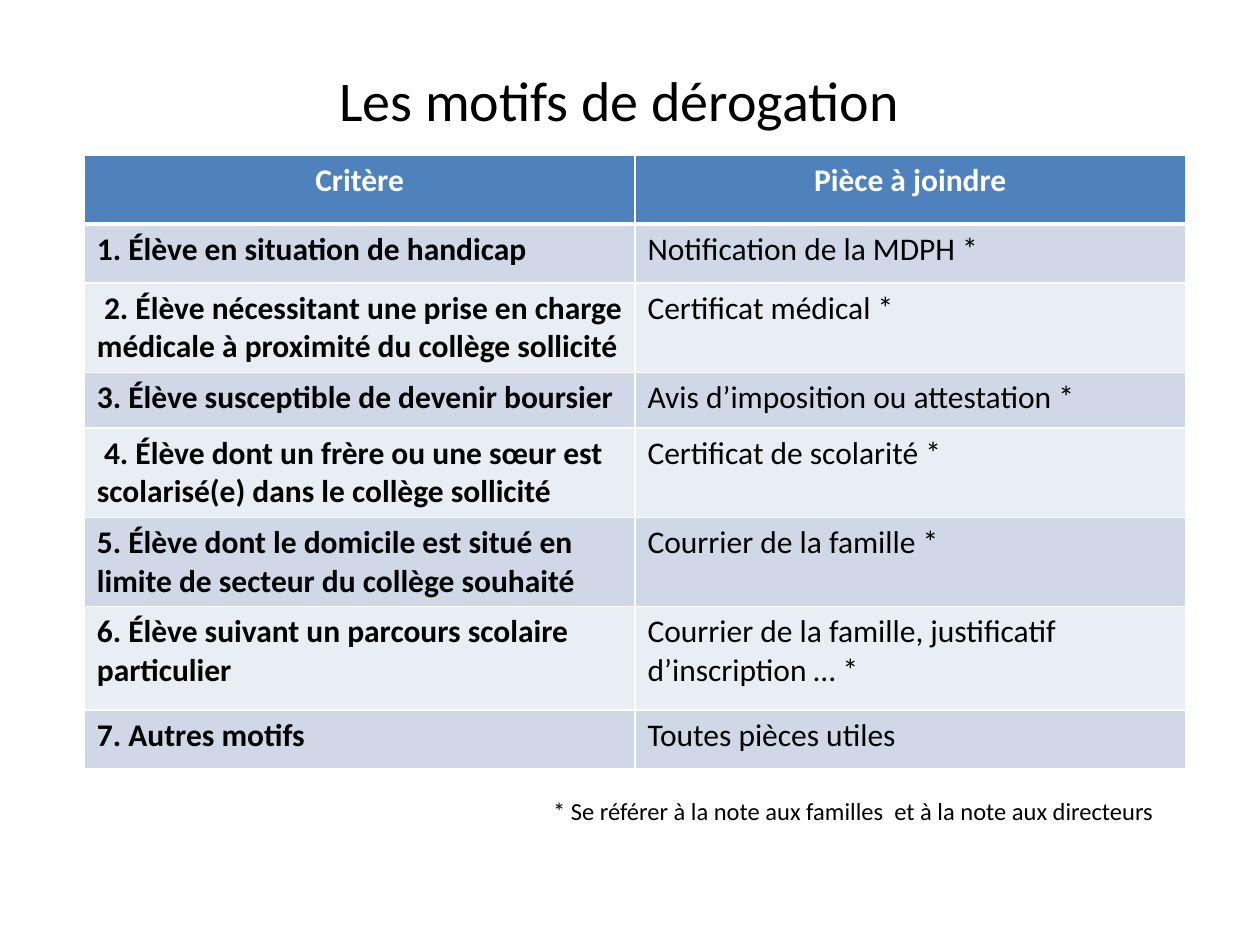
import pptx
import pptx.dml.color
import pptx.enum.text
import pptx.oxml
import pptx.oxml.ns
import pptx.util

Cm = pptx.util.Cm
Pt = pptx.util.Pt
ALIGN = pptx.enum.text.PP_ALIGN

COLORS = {
    "text": "000000",
    "white": "FFFFFF",
    "header": "4F81BD",
    "odd": "D0D8E8",
    "even": "E9EDF4",
}
FORMATS = {
    "title": {"size": Pt(32), "bold": False},
    "strong": {"size": Pt(18), "bold": True},
    "normal": {"size": Pt(18), "bold": False},
    "note": {"size": Pt(14), "bold": False},
}
HEADINGS = ["Critère", "Pièce à joindre"]
REASONS = [
    ("1. Élève en situation de handicap", "Notification de la MDPH *"),
    (" 2. Élève nécessitant une prise en charge médicale à proximité du collège sollicité",
     "Certificat médical *"),
    ("3. Élève susceptible de devenir boursier", "Avis d’imposition ou attestation *"),
    (" 4. Élève dont un frère ou une sœur est scolarisé(e) dans le collège sollicité",
     "Certificat de scolarité *"),
    ("5. Élève dont le domicile est situé en limite de secteur du collège souhaité",
     "Courrier de la famille *"),
    ("6. Élève suivant un parcours scolaire particulier",
     "Courrier de la famille, justificatif d’inscription … *"),
    ("7. Autres motifs", "Toutes pièces utiles"),
]
ROW_HEIGHTS = [1.4, 1.19, 1.8, 1.12, 1.8, 1.8, 2.08, 1.19]


class Page:
    """Slide under construction, with its font and kinds of element."""

    def __init__(self, deck, font="Calibri"):
        self.slide = deck.slides.add_slide(deck.slide_layouts[6])
        self.font = font

    def color(self, name):
        return pptx.dml.color.RGBColor.from_string(COLORS[name])

    def fill_text(self, frame, text, style, color="text", align=ALIGN.LEFT):
        frame.word_wrap = True
        para = frame.paragraphs[0]
        para.alignment = align
        span = para.add_run()
        span.text = text
        for name, value in {"name": self.font, **FORMATS[style]}.items():
            setattr(span.font, name, value)
        span.font.color.rgb = self.color(color)
        return para

    def text(self, left, top, width, height, text, style, **options):
        box = self.slide.shapes.add_textbox(Cm(left), Cm(top), Cm(width), Cm(height))
        return self.fill_text(box.text_frame, text, style, **options)

    def borders(self, cell, widths):
        properties = cell._tc.get_or_add_tcPr()
        for index, (side, width) in enumerate(widths.items()):
            line = pptx.oxml.parse_xml(
                f'<a:ln{side} {pptx.oxml.ns.nsdecls("a")} w="{Pt(width)}"><a:solidFill>'
                f'<a:srgbClr val="{COLORS["white"]}"/></a:solidFill></a:ln{side}>')
            properties.insert(index, line)

    def table(self, left, top, width, headings, rows, heights):
        frame = self.slide.shapes.add_table(
            len(heights), len(headings), Cm(left), Cm(top), Cm(width), Cm(sum(heights)))
        grid = frame.table
        for row, height in zip(grid.rows, heights):
            row.height = Cm(height)
        for row, texts in enumerate([headings, *rows]):
            for column, text in enumerate(texts):
                cell = grid.cell(row, column)
                cell.fill.solid()
                if row == 0:
                    fill, look = "header", ("strong", "white", ALIGN.CENTER)
                else:
                    fill = "odd" if row % 2 else "even"
                    look = ("normal" if column else "strong", "text", ALIGN.LEFT)
                cell.fill.fore_color.rgb = self.color(fill)
                self.fill_text(cell.text_frame, text, *look)
                self.borders(cell, {"L": 1, "R": 1, "T": 3 if row == 1 else 1,
                                    "B": 3 if row == 0 else 1})


def main():
    deck = pptx.Presentation()
    deck.slide_width, deck.slide_height = Cm(25.4), Cm(19.05)
    page = Page(deck)
    title = page.text(4.7, 1.12, 15.57, 1.6, "Les motifs de dérogation", "title",
                      align=ALIGN.CENTER)
    title.line_spacing = 1.05
    page.table(1.7, 3.12, 22.2, HEADINGS, REASONS, ROW_HEIGHTS)
    page.text(10.9, 15.93, 12.8, 0.86,
              "* Se référer à la note aux familles  et à la note aux directeurs", "note")
    deck.save("out.pptx")


if __name__ == "__main__":
    main()
